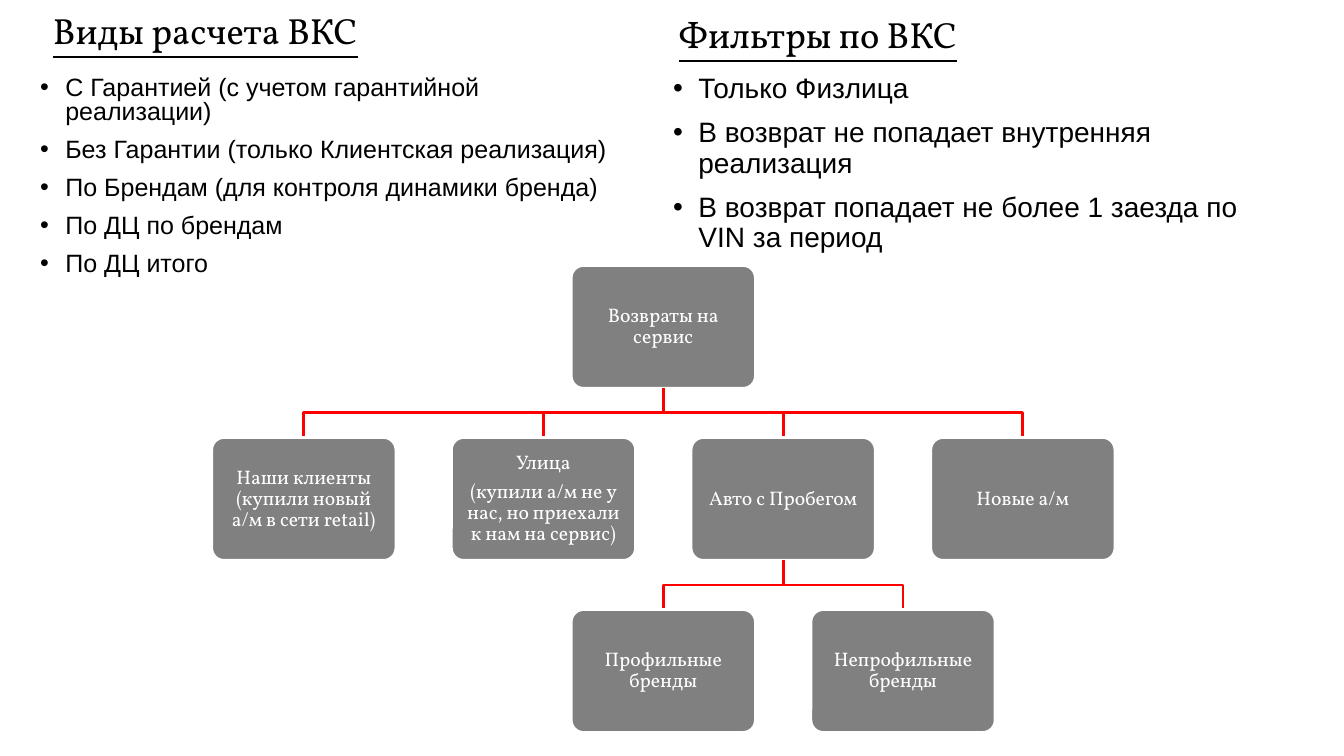
from pptx import Presentation
from pptx.dml.color import RGBColor
from pptx.enum.shapes import MSO_SHAPE
from pptx.enum.text import MSO_ANCHOR, MSO_AUTO_SIZE, PP_ALIGN
from pptx.oxml.ns import qn
from pptx.util import Pt
from lxml import etree

COLORS = {"text": "000000", "box": "808080", "paper": "FFFFFF", "link": "FF0000"}
HEAD_FONT, BODY_FONT = "Vollkorn", "Arial"
BOX_W, BOX_H = 131.6, 87.8
COL_STEP, ROW_STEP = 171.2, 122.9

CALC_TYPES = [
    "С Гарантией (с учетом гарантийной реализации)",
    "Без Гарантии (только Клиентская реализация)",
    "По Брендам (для контроля динамики бренда)",
    "По ДЦ по брендам",
    "По ДЦ итого",
]
FILTERS = [
    "Только Физлица",
    "В возврат не попадает внутренняя реализация",
    "В возврат попадает не более 1 заезда по VIN за период",
]
TREE = (1.5, ["Возвраты на сервис"], [
    (0, ["Наши клиенты (купили новый а/м в сети retail)"], []),
    (1, ["Улица", "(купили а/м не у нас, но приехали к нам на сервис)"], []),
    (2, ["Авто с Пробегом"], [
        (1.5, ["Профильные бренды"], []),
        (2.5, ["Непрофильные бренды"], []),
    ]),
    (3, ["Новые а/м"], []),
])


def color(name):
    return RGBColor.from_string(COLORS[name])


def add_run(p, text, font, size, name):
    r = p.add_run()
    r.text = text
    r.font.name = font
    r.font.size = Pt(size)
    r.font.color.rgb = color(name)
    return r


def set_margins(tf, x, y):
    tf.margin_left = tf.margin_right = Pt(x)
    tf.margin_top = tf.margin_bottom = Pt(y)


def paragraphs(tf, texts):
    for i, text in enumerate(texts):
        yield i, tf.add_paragraph() if i else tf.paragraphs[0], text


def add_heading(sp, text, x, y, w, h):
    sp.left, sp.top, sp.width, sp.height = Pt(x), Pt(y), Pt(w), Pt(h)
    tf = sp.text_frame
    tf.word_wrap = True
    tf.auto_size = MSO_AUTO_SIZE.NONE
    tf.vertical_anchor = MSO_ANCHOR.TOP
    set_margins(tf, 0, 0)
    p = tf.paragraphs[0]
    p.alignment = PP_ALIGN.LEFT
    add_run(p, text, HEAD_FONT, 26, "text").font.underline = True


def add_bullets(s, items, x, y, w, h, size, spacing):
    tf = s.shapes.add_textbox(Pt(x), Pt(y), Pt(w), Pt(h)).text_frame
    tf.word_wrap = True
    for i, p, text in paragraphs(tf, items):
        p.line_spacing = spacing
        p.space_before = Pt(10 if i else 0)
        pPr = p._p.get_or_add_pPr()
        pPr.set("marL", str(Pt(18)))
        pPr.set("indent", str(-Pt(18)))
        etree.SubElement(pPr, qn("a:buFont")).set("typeface", BODY_FONT)
        etree.SubElement(pPr, qn("a:buChar")).set("char", "•")
        add_run(p, text, BODY_FONT, size, "text")


def add_box(s, texts, x, y):
    sp = s.shapes.add_shape(MSO_SHAPE.ROUNDED_RECTANGLE, Pt(x), Pt(y), Pt(BOX_W), Pt(BOX_H))
    sp.adjustments[0] = 0.1
    sp.shadow.inherit = False
    sp.fill.solid()
    sp.fill.fore_color.rgb = color("box")
    sp.line.color.rgb = color("paper")
    sp.line.width = Pt(2)
    tf = sp.text_frame
    tf.word_wrap = True
    tf.vertical_anchor = MSO_ANCHOR.MIDDLE
    set_margins(tf, 4, 4)
    for i, p, text in paragraphs(tf, texts):
        p.alignment = PP_ALIGN.CENTER
        p.line_spacing = 0.9
        p.space_before = Pt(5 if i else 0)
        add_run(p, text, HEAD_FONT, 14, "paper")


def add_link(s, x1, y1, x2, y2):
    mid = (y1 + y2) / 2
    builder = s.shapes.build_freeform(Pt(x1), Pt(y1))
    corners = [(x1, mid), (x2, mid), (x2, y2)]
    builder.add_line_segments([(Pt(x), Pt(y)) for x, y in corners], close=False)
    sp = builder.convert_to_shape()
    sp.shadow.inherit = False
    sp.fill.background()
    sp.line.color.rgb = color("link")
    sp.line.width = Pt(2)


def add_tree(s, node, left, top):
    column, texts, children = node
    x = left + column * COL_STEP
    add_box(s, texts, x, top)
    center = x + BOX_W / 2
    for child in children:
        child_center = left + child[0] * COL_STEP + BOX_W / 2
        add_link(s, center, top + BOX_H, child_center, top + ROW_STEP)
        add_tree(s, child, left, top + ROW_STEP)


def main():
    prs = Presentation()
    prs.slide_width, prs.slide_height = Pt(960), Pt(540)
    s = prs.slides.add_slide(prs.slide_layouts[5])
    add_heading(s.shapes.title, "Виды расчета ВКС", 37.8, 5.8, 436, 32)
    add_bullets(s, CALC_TYPES, 21.6, 51.8, 430.6, 156, 17.9, 0.8)
    add_bullets(s, FILTERS, 473.8, 49.7, 424, 140, 20, 0.9)
    filters_head = s.shapes.add_textbox(0, 0, 0, 0)
    add_heading(filters_head, "Фильтры по ВКС", 484.8, 8.6, 436, 32)
    add_tree(s, TREE, 151.2, 189.6)
    prs.save("out.pptx")


if __name__ == "__main__":
    main()
